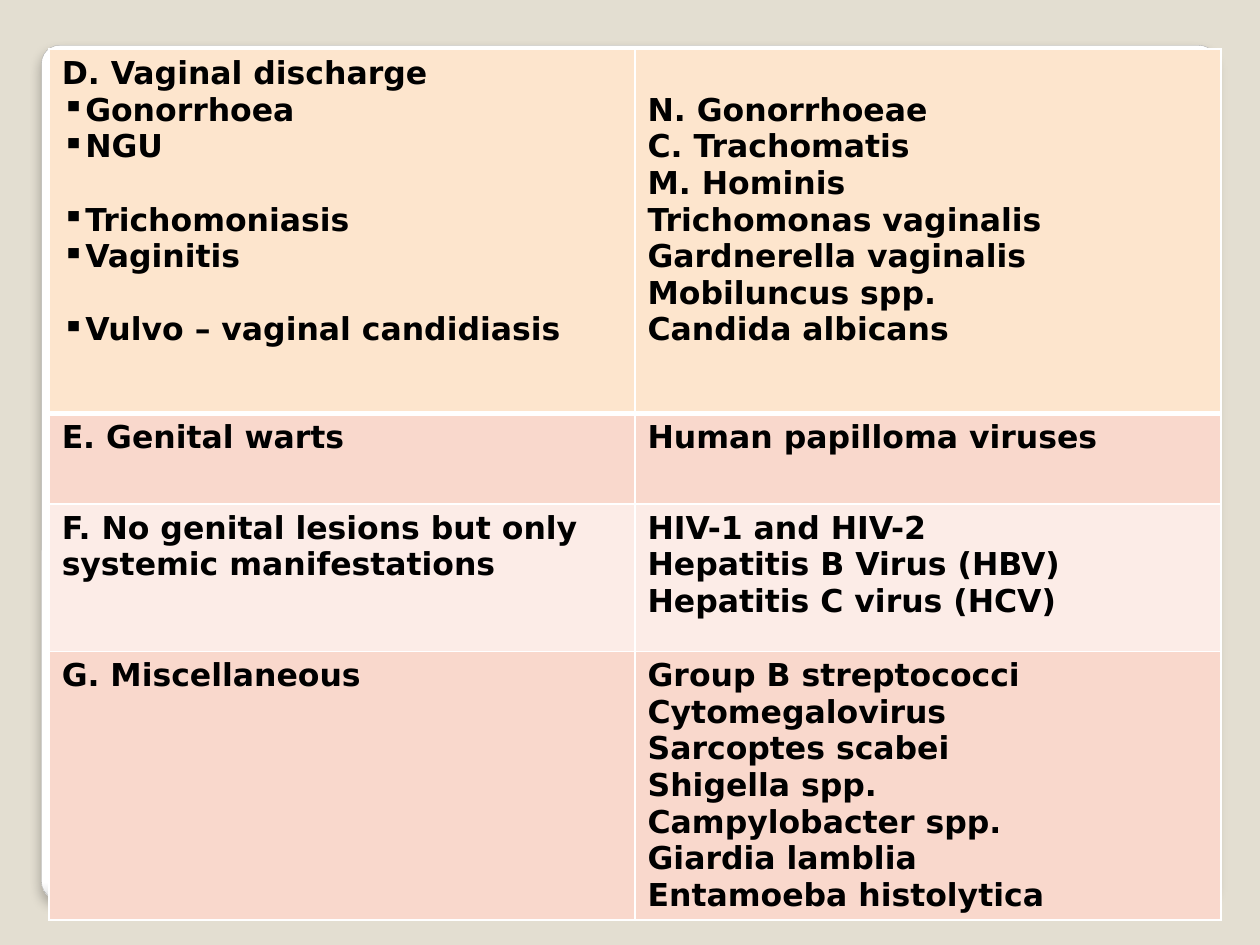
from dataclasses import dataclass

import pptx
import pptx.dml.color
import pptx.enum.shapes
import pptx.oxml
import pptx.oxml.ns
import pptx.util
from lxml import etree

Inches, Pt = pptx.util.Inches, pptx.util.Pt
WIDTH, HEIGHT = 10, 7.5


@dataclass(frozen=True)
class Theme:
    font: str = "DejaVu Sans"
    size: float = 18
    line: float = 21  # height of one line of text, in points
    text: str = "000000"
    background: str = "E3DED1"
    white: str = "FFFFFF"
    panel_edge: str = "DADADA"
    panel_line: str = "A4A4A4"
    head: str = "FDE5CD"
    dark: str = "F9D8CC"
    light: str = "FCECE7"


THEME = Theme()


@dataclass(frozen=True)
class Item:
    """A bulleted line; gap counts the lines left free above it."""
    text: str
    gap: int = 0
    indent: float = 0.17


# Row height, fill, symptom lines, organism lines, lines free above the organisms
ROWS = [
    (2.89, THEME.head,
     ["D. Vaginal discharge", Item("Gonorrhoea"), Item("NGU"),
      Item("Trichomoniasis", gap=1), Item("Vaginitis"),
      Item("Vulvo – vaginal candidiasis", gap=1, indent=0.09)],
     ["N. Gonorrhoeae", "C. Trachomatis", "M. Hominis", "Trichomonas vaginalis",
      "Gardnerella vaginalis", "Mobiluncus spp.", "Candida albicans"], 1),
    (0.72, THEME.dark, ["E. Genital warts"], ["Human papilloma viruses"], 0),
    (1.17, THEME.light,
     ["F. No genital lesions but only systemic manifestations"],
     ["HIV-1 and HIV-2", "Hepatitis B Virus (HBV)", "Hepatitis C virus (HCV)"], 0),
    (2.13, THEME.dark, ["G. Miscellaneous"],
     ["Group B streptococci", "Cytomegalovirus", "Sarcoptes scabei", "Shigella spp.",
      "Campylobacter spp.", "Giardia lamblia", "Entamoeba histolytica"], 0),
]


def rgb(value):
    return pptx.dml.color.RGBColor.from_string(value)


def share_box(left, top, width, height):
    """Turn shares of the slide into lengths."""
    return (Inches(left * WIDTH), Inches(top * HEIGHT),
            Inches(width * WIDTH), Inches(height * HEIGHT))


def add_panel(s, box):
    sp = s.shapes.add_shape(pptx.enum.shapes.MSO_SHAPE.ROUNDED_RECTANGLE, *box)
    sp.adjustments[0] = 0.021
    sp.fill.gradient()
    sp.fill.gradient_angle = 270
    stops = zip(sp.fill.gradient_stops, (0.98, 1), (THEME.white, THEME.panel_edge))
    for stop, position, color in stops:
        stop.position = position
        stop.color.rgb = rgb(color)
    sp.line.color.rgb = rgb(THEME.panel_line)
    sp.line.width = Pt(0.16)
    sp.shadow.inherit = False
    effects = sp._element.spPr.find(pptx.oxml.ns.qn("a:effectLst"))
    effects.append(pptx.oxml.parse_xml(
        f'<a:outerShdw {pptx.oxml.ns.nsdecls("a")} blurRad="{Pt(6)}" dist="{Pt(4)}" '
        'dir="5400000" algn="tl" rotWithShape="0"><a:srgbClr val="000000">'
        '<a:alpha val="25000"/></a:srgbClr></a:outerShdw>'))


def set_borders(cell, bottom):
    tc_pr = cell._tc.get_or_add_tcPr()
    for side, width in (("L", 1), ("R", 1), ("T", 1), ("B", bottom)):
        tc_pr.append(pptx.oxml.parse_xml(
            f'<a:ln{side} {pptx.oxml.ns.nsdecls("a")} w="{Pt(width)}"><a:solidFill>'
            f'<a:srgbClr val="{THEME.white}"/></a:solidFill></a:ln{side}>'))


def set_bullet(p, item):
    p_pr = p._p.get_or_add_pPr()
    p_pr.set("marL", str(Inches(item.indent)))
    p_pr.set("indent", str(-Inches(item.indent)))
    etree.SubElement(p_pr, pptx.oxml.ns.qn("a:buChar"), char="▪")
    p.space_before = Pt(item.gap * THEME.line)


def fill_cell(cell, lines, color, bottom, free_lines=0):
    set_borders(cell, bottom)
    cell.fill.solid()
    cell.fill.fore_color.rgb = rgb(color)
    cell.margin_top = Inches(0.05) + Pt(free_lines * THEME.line)
    tf = cell.text_frame
    for i, line in enumerate(lines):
        p = tf.add_paragraph() if i else tf.paragraphs[0]
        if isinstance(line, Item):
            set_bullet(p, line)
        r = p.add_run()
        r.text = line.text if isinstance(line, Item) else line
        r.font.name = THEME.font
        r.font.size = Pt(THEME.size)
        r.font.bold = True
        r.font.color.rgb = rgb(THEME.text)


def add_disease_table(s, box):
    table = s.shapes.add_table(len(ROWS), 2, *box).table
    for column in table.columns:
        column.width = box[2] // 2
    for i, (height, color, symptoms, organisms, free_lines) in enumerate(ROWS):
        table.rows[i].height = Inches(height)
        bottom = 1 if i else 3
        fill_cell(table.cell(i, 0), symptoms, color, bottom)
        fill_cell(table.cell(i, 1), organisms, color, bottom, free_lines)


def main():
    prs = pptx.Presentation()
    prs.slide_width, prs.slide_height = Inches(WIDTH), Inches(HEIGHT)
    s = prs.slides.add_slide(prs.slide_layouts[6])
    s.background.fill.solid()
    s.background.fill.fore_color.rgb = rgb(THEME.background)
    table_height = sum(row[0] for row in ROWS) / HEIGHT
    add_panel(s, share_box(0.033, 0.048, 0.933, 0.904))
    add_disease_table(s, share_box(0.039, 0.052, 0.93, table_height))
    prs.save("out.pptx")


if __name__ == "__main__":
    main()
